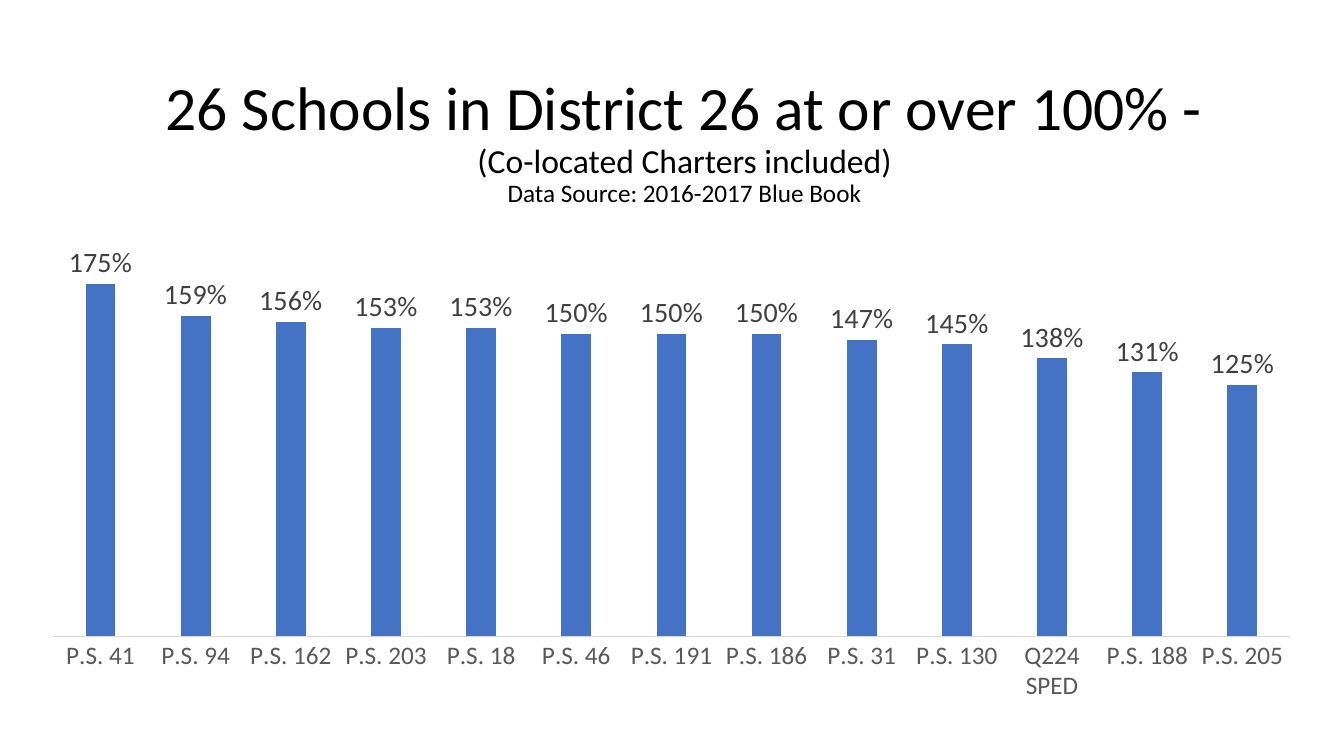
from dataclasses import dataclass

from lxml import etree
from pptx import Presentation
from pptx.chart.data import CategoryChartData
from pptx.dml.color import RGBColor
from pptx.enum.chart import XL_CHART_TYPE as ChartType
from pptx.enum.chart import XL_LABEL_POSITION as LabelPos
from pptx.enum.chart import XL_TICK_MARK as TickMark
from pptx.enum.text import MSO_ANCHOR as Anchor
from pptx.enum.text import MSO_AUTO_SIZE as AutoSize
from pptx.enum.text import PP_ALIGN as Align
from pptx.oxml.ns import qn
from pptx.util import Inches, Pt


@dataclass(frozen=True)
class Theme:
    font: str = "Calibri"
    title: str = "000000"
    bar: str = "4472C4"
    value: str = "404040"
    category: str = "595959"
    axis: str = "D9D9D9"
    title_sizes: tuple = (44, 24, 18)
    value_size: int = 20
    category_size: int = 18


# Content
TITLE_LINES = (
    "26 Schools in District 26 at or over 100% -",
    "(Co-located Charters included)",
    "Data Source: 2016-2017 Blue Book",
)
UTILIZATION = {
    "P.S. 41": 1.75, "P.S. 94": 1.59, "P.S. 162": 1.56, "P.S. 203": 1.53,
    "P.S. 18": 1.53, "P.S. 46": 1.5, "P.S. 191": 1.5, "P.S. 186": 1.5,
    "P.S. 31": 1.47, "P.S. 130": 1.45, "Q224 SPED": 1.38,
    "P.S. 188": 1.31, "P.S. 205": 1.25,
}
TITLE_BOX = (1.04, 0.69, 11.5, 1.45)
CHART_BOX = (0.4, 2.17, 12.52, 4.93)
PLOT_AREA = {"x": 0.01, "y": 0.03, "w": 0.98, "h": 0.81}
THEME = Theme()


def style_font(font, size, color):
    font.name = THEME.font
    font.size = Pt(size)
    font.color.rgb = RGBColor.from_string(color)


def add_title(slide):
    sp = slide.shapes.title
    sp.left, sp.top, sp.width, sp.height = map(Inches, TITLE_BOX)
    tf = sp.text_frame
    tf.word_wrap = True
    tf.auto_size = AutoSize.NONE
    tf.vertical_anchor = Anchor.MIDDLE
    p = tf.paragraphs[0]
    p.alignment = Align.CENTER
    p.line_spacing = 0.9
    for i, (line, size) in enumerate(zip(TITLE_LINES, THEME.title_sizes)):
        if i:
            p.add_line_break()
        r = p.add_run()
        r.text = line
        style_font(r.font, size, THEME.title)


def set_plot_area(chart):
    area = chart._chartSpace.chart.plotArea
    for old in area.findall(qn("c:layout")):
        area.remove(old)
    layout = etree.Element(qn("c:layout"))
    manual = etree.SubElement(layout, qn("c:manualLayout"))
    settings = {"layoutTarget": "inner", "xMode": "edge", "yMode": "edge", **PLOT_AREA}
    for tag, value in settings.items():
        etree.SubElement(manual, qn(f"c:{tag}")).set("val", str(value))
    area.insert(0, layout)


def add_utilization_chart(slide):
    data = CategoryChartData(number_format="0%")
    data.categories = list(UTILIZATION)
    data.add_series("Series 1", list(UTILIZATION.values()))
    chart = slide.shapes.add_chart(
        ChartType.COLUMN_CLUSTERED, *map(Inches, CHART_BOX), data
    ).chart
    chart.has_legend = False
    chart.has_title = False
    style_font(chart.font, 10, THEME.title)
    set_plot_area(chart)

    # Axes
    schools = chart.category_axis
    schools.major_tick_mark = schools.minor_tick_mark = TickMark.NONE
    style_font(schools.tick_labels.font, THEME.category_size, THEME.category)
    schools.format.line.color.rgb = RGBColor.from_string(THEME.axis)
    schools.format.line.width = Pt(0.75)
    percent = chart.value_axis
    percent.minimum_scale, percent.maximum_scale = 0, 2
    percent.has_major_gridlines = False
    percent.visible = False

    # Bars and their values
    plot = chart.plots[0]
    plot.gap_width, plot.overlap = 219, -27
    plot.vary_by_categories = False
    bars = plot.series[0]
    bars.format.fill.solid()
    bars.format.fill.fore_color.rgb = RGBColor.from_string(THEME.bar)
    labels = bars.data_labels
    labels.show_value = True
    labels.position = LabelPos.OUTSIDE_END
    labels.number_format = "0%"
    labels.number_format_is_linked = False
    style_font(labels.font, THEME.value_size, THEME.value)


def main():
    prs = Presentation()
    prs.slide_width, prs.slide_height = Inches(13.33), Inches(7.5)
    slide = prs.slides.add_slide(prs.slide_layouts.get_by_name("Title Only"))
    add_title(slide)
    add_utilization_chart(slide)
    prs.save("out.pptx")


if __name__ == "__main__":
    main()
